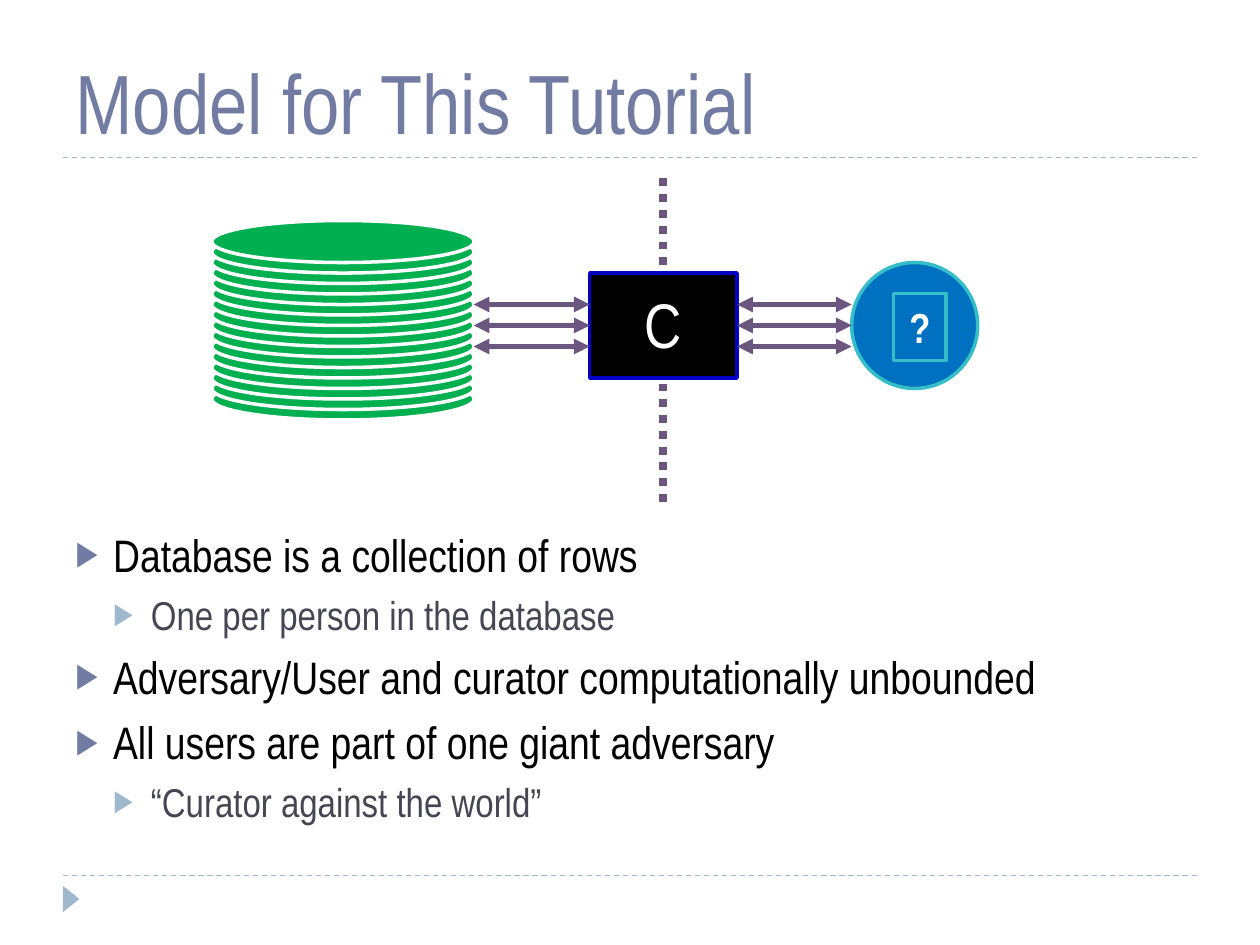
from lxml.etree import SubElement as Sub
from pptx import Presentation
from pptx.dml.color import RGBColor as RGB
from pptx.enum.dml import MSO_LINE as Dash
from pptx.enum.shapes import MSO_CONNECTOR as Con, MSO_SHAPE as Form
from pptx.enum.text import MSO_ANCHOR as Anchor, PP_ALIGN as Align
from pptx.oxml.ns import qn
from pptx.util import Pt

FONT = "Arial Narrow"
HEX = {
    "title": "727CA3", "rule": "9FB8CD", "body": "000000", "sub": "464653",
    "disk": "00B050", "white": "FFFFFF", "user": "0070C0", "edge": "36BEC8",
    "link": "6B5680", "black": "000000", "frame": "0000C6",
}
TITLE = "Model for This Tutorial"
ITEMS = [
    (0, "Database is a collection of rows"),
    (1, "One per person in the database"),
    (0, "Adversary/User and curator computationally unbounded"),
    (0, "All users are part of one giant adversary"),
    (1, "“Curator against the world”"),
]
LEVELS = [
    {"size": 26, "color": "body", "mark": "title", "before": 6},
    {"size": 23, "color": "sub", "mark": "rule", "before": 5},
]
RULES = [90, 500.4]
ROWS, TOP, STEP = 16, 126, 6
LINKS = [(270.7, 337), (421.2, 486.7)]
LANES = [174, 186, 198]


def rgb(name):
    return RGB.from_string(HEX[name])


def write(para, text, size, color, bold=False, align=Align.LEFT):
    para.alignment = align
    run = para.add_run()
    run.text = text
    font = run.font
    font.name, font.size, font.bold = FONT, Pt(size), bold
    font.color.rgb = rgb(color)


def bullet(para, level, mark):
    props = para._p.get_or_add_pPr()
    props.set("marL", str(Pt(21.6 * (level + 1))))
    props.set("indent", str(-Pt(21.6)))
    tint = Sub(props, qn("a:buClr"))
    Sub(tint, qn("a:srgbClr"), val=HEX[mark])
    Sub(props, qn("a:buSzPct"), val="76000")
    Sub(props, qn("a:buFont"), typeface="Arial")
    Sub(props, qn("a:buChar"), char="▶")


def shape(form, box, fill, edge=None):
    item = slide.shapes.add_shape(form, *map(Pt, box))
    item.shadow.inherit = False
    item.fill.solid()
    item.fill.fore_color.rgb = rgb(fill)
    if edge:
        item.line.color.rgb = rgb(edge)
        item.line.width = Pt(2)
    else:
        item.line.fill.background()
    return item


def line(start, end, color, width, dash=None, heads=False):
    item = slide.shapes.add_connector(Con.STRAIGHT, *map(Pt, start + end))
    item.line.color.rgb = rgb(color)
    item.line.width = Pt(width)
    if dash:
        item.line.dash_style = dash
    if heads:
        for tag in ("a:headEnd", "a:tailEnd"):
            Sub(item.line._get_or_add_ln(), qn(tag), type="triangle")
    Sub(item._element.spPr, qn("a:effectLst"))


def label(item, text, size, bold=False):
    frame = item.text_frame
    frame.word_wrap = False
    frame.vertical_anchor = Anchor.MIDDLE
    write(frame.paragraphs[0], text, size, "white", bold, Align.CENTER)


deck = Presentation()
deck.slide_width, deck.slide_height = Pt(720), Pt(540)
slide = deck.slides.add_slide(deck.slide_layouts[5])

for y in RULES:
    line((36, y), (684, y), "rule", 0.75, Dash.DASH)
shape(Form.ISOSCELES_TRIANGLE, (33.1, 509, 15.1, 9.4), "rule").rotation = 90

head = slide.shapes.title
head.left, head.top, head.width, head.height = map(Pt, (36, 12.2, 648, 77.8))
head.text_frame.vertical_anchor = Anchor.BOTTOM
write(head.text_frame.paragraphs[0], TITLE, 48, "title")

body = slide.shapes.add_textbox(*map(Pt, (36, 297.4, 648, 188))).text_frame
body.word_wrap = True
for i, (level, text) in enumerate(ITEMS):
    para = body.add_paragraph() if i else body.paragraphs[0]
    look = LEVELS[level]
    para.level = level
    para.space_before = Pt(look["before"])
    bullet(para, level, look["mark"])
    write(para, text, look["size"], look["color"])

for row in reversed(range(ROWS)):
    shape(Form.OVAL, (121, TOP + row * STEP, 150, 24), "disk", "white")

shape(Form.OVAL, (486.7, 150, 72, 72), "user", "edge")
label(shape(Form.RECTANGLE, (510.5, 167.8, 30.2, 38.2), "user", "edge"), "?", 24, True)

line((378.7, 102), (378.7, 288), "link", 4.5, Dash.ROUND_DOT)
shape(Form.RECTANGLE, (337, 156, 84.2, 60), "black", "frame")
for left, right in LINKS:
    for y in LANES:
        line((left, y), (right, y), "link", 3, heads=True)
label(slide.shapes.add_textbox(*map(Pt, (360.7, 159.1, 36, 51.1))), "C", 36)

deck.save("out.pptx")
